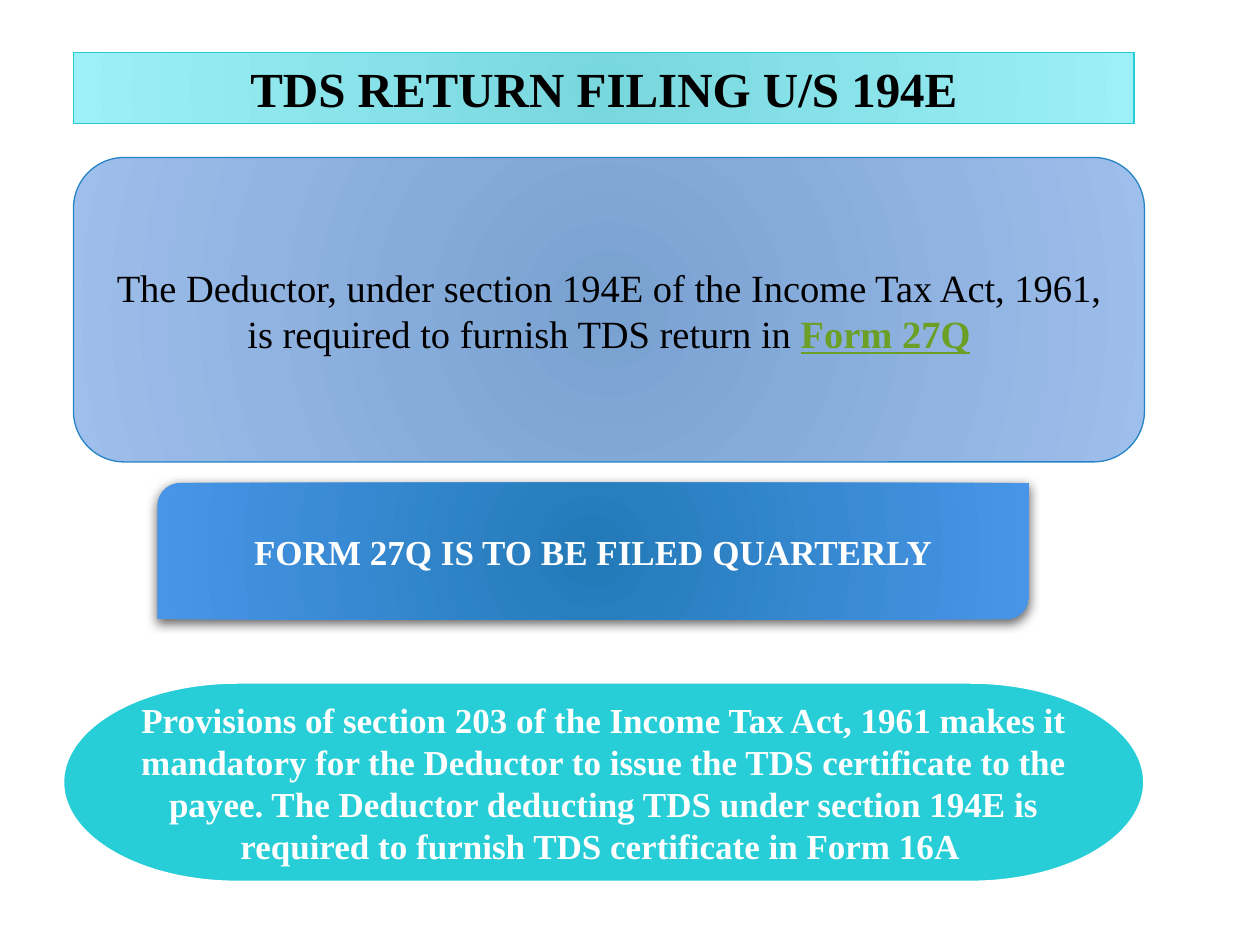
from dataclasses import dataclass

from lxml import etree
from pptx import Presentation
from pptx.dml.color import RGBColor
from pptx.enum.shapes import MSO_SHAPE
from pptx.enum.text import MSO_ANCHOR, MSO_AUTO_SIZE, PP_ALIGN
from pptx.oxml.ns import qn
from pptx.util import Pt

EMU_PER_PX = 7620
TITLE_ONLY_LAYOUT = 5
ROUNDED = MSO_SHAPE.ROUNDED_RECTANGLE
DIAGONAL = MSO_SHAPE.ROUND_2_DIAG_RECTANGLE
TERMINATOR = MSO_SHAPE.FLOWCHART_TERMINATOR
TOP, MIDDLE = MSO_ANCHOR.TOP, MSO_ANCHOR.MIDDLE
NO_AUTOFIT = MSO_AUTO_SIZE.NONE
CENTER = PP_ALIGN.CENTER


@dataclass(frozen=True)
class Theme:
    """Colours, font and type sizes of the slide."""

    font: str = "Times New Roman"
    title_size: int = 28
    body_size: int = 22
    label_size: int = 20
    black: str = "000000"
    white: str = "FFFFFF"
    green: str = "6B9F25"
    turquoise: str = "27CED7"
    blue: str = "2683C6"
    title_gradient: tuple = ("79D7DE", "9CF0F7")
    rule_gradient: tuple = ("79A1D1", "9EBEEB")
    period_gradient: tuple = ("237AB8", "4895E7")


THEME = Theme()


def px(length):
    """Convert px to EMU."""
    return length * EMU_PER_PX


def add_panel(slide, kind, box):
    """Add a preset shape without a shadow in the given box."""
    shape = slide.shapes.add_shape(kind, *map(px, box))
    shape.shadow.inherit = False
    return shape


def fill_radial(shape, colors):
    """Fill a shape with a gradient from its centre outwards."""
    shape.fill.gradient()
    for stop, color in zip(shape.fill.gradient_stops, colors):
        stop.color.rgb = RGBColor.from_string(color)
    gradient = shape._element.spPr.find(qn("a:gradFill"))
    gradient.remove(gradient.find(qn("a:lin")))
    circle = etree.SubElement(gradient, qn("a:path"), path="circle")
    etree.SubElement(circle, qn("a:fillToRect"), dict.fromkeys("ltrb", "100000"))


def set_line(shape, color, width):
    """Give a shape a solid outline."""
    shape.line.color.rgb = RGBColor.from_string(color)
    shape.line.width = Pt(width)


def add_drop_shadow(shape, color, opacity, blur, distance):
    """Add a soft shadow below a shape."""
    effects = shape._element.spPr.find(qn("a:effectLst"))
    shadow = etree.SubElement(
        effects, qn("a:outerShdw"), blurRad=str(Pt(blur)), dist=str(Pt(distance)),
        dir="5400000", algn="ctr", rotWithShape="0")
    tone = etree.SubElement(shadow, qn("a:srgbClr"), val=color)
    etree.SubElement(tone, qn("a:alpha"), val=str(opacity * 1000))


def write_text(shape, text, size, color, bold=False, underline=None, anchor=MIDDLE):
    """Append a formatted run to the centred paragraph of a shape."""
    frame = shape.text_frame
    frame.word_wrap = True
    frame.auto_size = NO_AUTOFIT
    frame.vertical_anchor = anchor
    paragraph = frame.paragraphs[0]
    paragraph.alignment = CENTER
    run = paragraph.add_run()
    run.text = text
    run.font.name = THEME.font
    run.font.size = Pt(size)
    run.font.bold = bold
    run.font.underline = underline
    run.font.color.rgb = RGBColor.from_string(color)


def place_title(slide, box):
    """Turn the title placeholder into the heading bar."""
    title = slide.shapes.title
    title.left, title.top, title.width, title.height = map(px, box)
    fill_radial(title, THEME.title_gradient)
    set_line(title, THEME.turquoise, 0.75)
    write_text(title, "TDS RETURN FILING U/S 194E", THEME.title_size, THEME.black,
               bold=True, anchor=TOP)


def place_return_rule(slide, box):
    """Place the panel that names the return form."""
    panel = add_panel(slide, ROUNDED, box)
    fill_radial(panel, THEME.rule_gradient)
    set_line(panel, THEME.blue, 0.75)
    write_text(panel, "The Deductor, under section 194E of the Income Tax Act, 1961, "
               "is required to furnish TDS return in ", THEME.body_size, THEME.black)
    write_text(panel, "Form 27Q", THEME.body_size, THEME.green, bold=True, underline=True)


def place_filing_period(slide, box):
    """Place the raised banner with the filing period."""
    banner = add_panel(slide, DIAGONAL, box)
    fill_radial(banner, THEME.period_gradient)
    banner.line.fill.background()
    add_drop_shadow(banner, THEME.black, opacity=60, blur=6, distance=2)
    write_text(banner, "FORM 27Q IS TO BE FILED QUARTERLY", THEME.label_size,
               THEME.white, bold=True)


def place_certificate_rule(slide, box):
    """Place the capsule about the TDS certificate."""
    capsule = add_panel(slide, TERMINATOR, box)
    capsule.fill.solid()
    capsule.fill.fore_color.rgb = RGBColor.from_string(THEME.turquoise)
    set_line(capsule, THEME.white, 1.5)
    write_text(capsule, "Provisions of section 203 of the Income Tax Act, 1961 makes it "
               "mandatory for the Deductor to issue the TDS certificate to the payee. "
               "The Deductor deducting TDS under section 194E is required to furnish "
               "TDS certificate in Form 16A ", THEME.label_size, THEME.white, bold=True)


def main():
    """Build the slide and save it."""
    presentation = Presentation()
    presentation.slide_width, presentation.slide_height = px(1200), px(900)
    slide = presentation.slides.add_slide(presentation.slide_layouts[TITLE_ONLY_LAYOUT])
    place_title(slide, (70, 50, 1010, 68))
    place_return_rule(slide, (70, 150, 1020, 290))
    place_filing_period(slide, (150, 460, 830, 130))
    place_certificate_rule(slide, (60, 650, 1030, 190))
    presentation.save("out.pptx")


if __name__ == "__main__":
    main()
